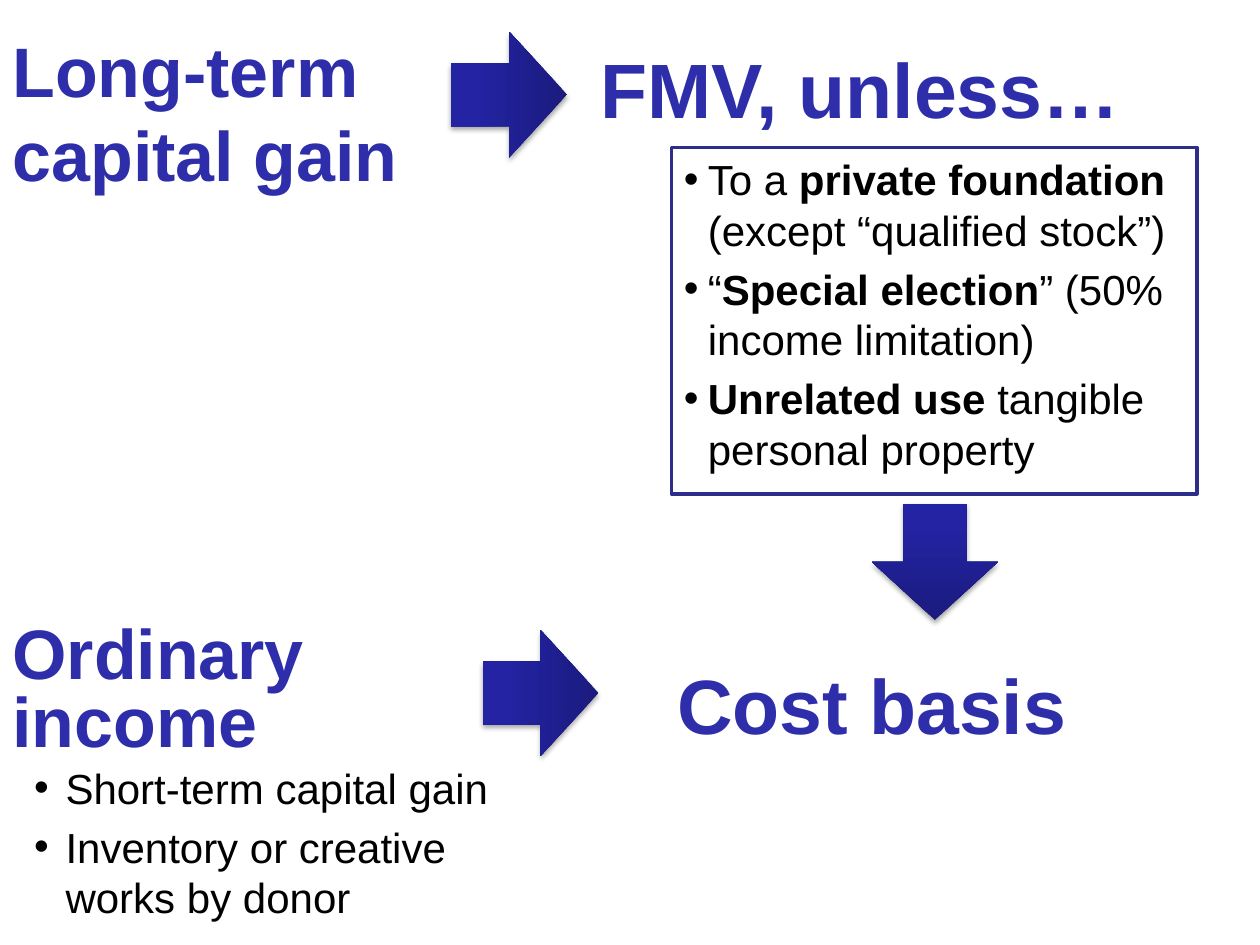
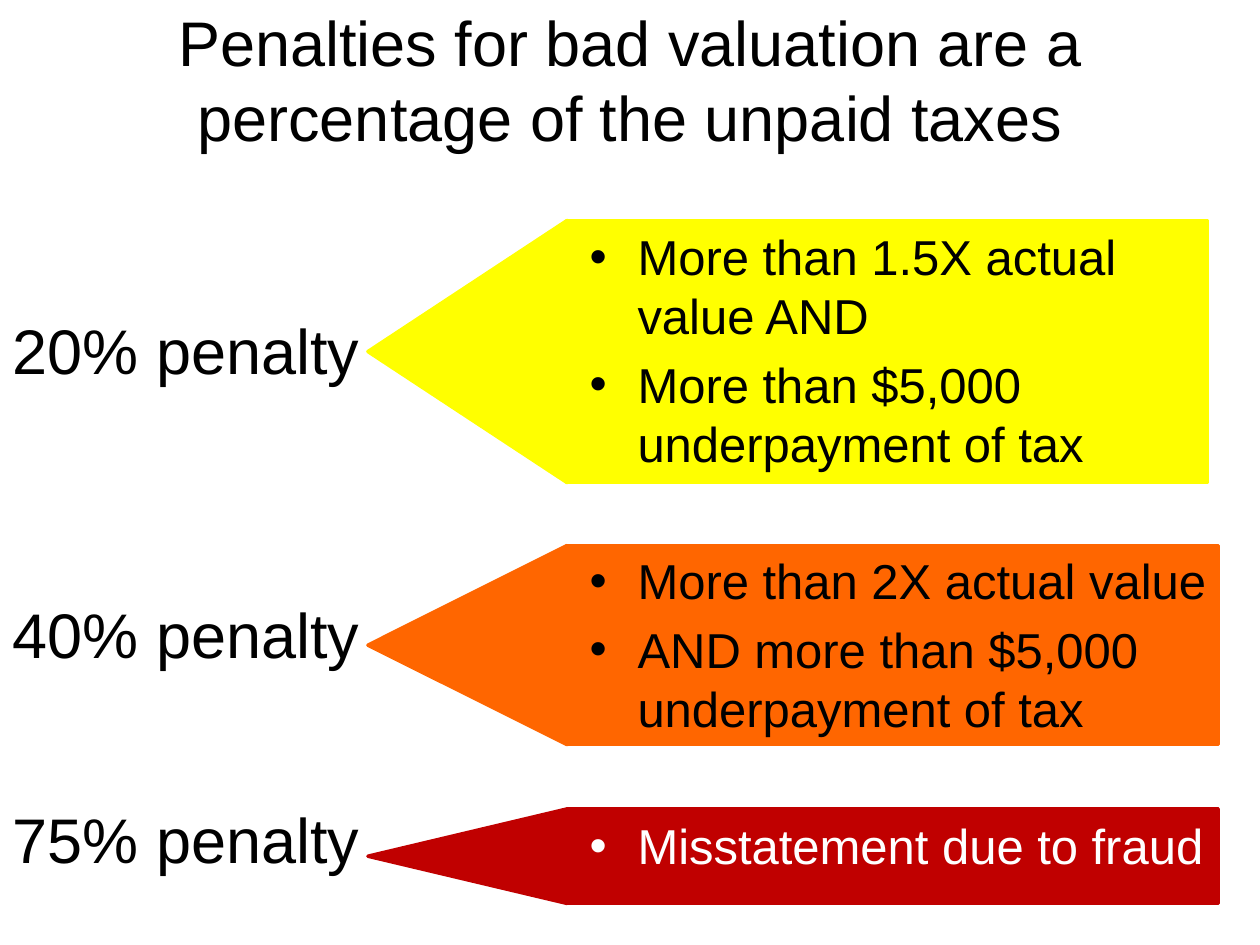
from lxml import etree
from pptx import Presentation
from pptx.dml.color import RGBColor
from pptx.enum.shapes import MSO_SHAPE
from pptx.enum.text import MSO_ANCHOR, MSO_AUTO_SIZE, PP_ALIGN
from pptx.oxml.ns import qn
from pptx.util import Inches, Pt

FONT = "Arial"
BLACK = RGBColor(0x00, 0x00, 0x00)
WHITE = RGBColor(0xFF, 0xFF, 0xFF)
HEADING_BLUE = RGBColor(0x2E, 0x2E, 0xAA)
BORDER_BLUE = RGBColor(0x2D, 0x2D, 0x8A)
ARROW_TIP = RGBColor(0x1B, 0x1B, 0x7E)
ARROW_TAIL = RGBColor(0x23, 0x23, 0xA3)
YELLOW = RGBColor(0xFF, 0xFF, 0x00)
ORANGE = RGBColor(0xFF, 0x66, 0x00)
RED = RGBColor(0xC0, 0x00, 0x00)

TITLE_AND_CONTENT = 1
TWO_CONTENT = 3


def set_bullet(paragraph, indent):
    """Give a hanging bullet, or none when indent is 0."""
    properties = paragraph._p.get_or_add_pPr()
    properties.set("marL", str(Inches(indent)))
    properties.set("indent", str(-Inches(indent)))
    if indent:
        etree.SubElement(properties, qn("a:buFont"), typeface=FONT)
        etree.SubElement(properties, qn("a:buChar"), char="•")
    else:
        etree.SubElement(properties, qn("a:buNone"))


def write_text(frame, *lines, size, color=BLACK, bold=False, align=PP_ALIGN.LEFT,
               anchor=MSO_ANCHOR.TOP, indent=0, line_spacing=None, space_before=None):
    """Write one paragraph per line; *asterisks* switch bold on and off."""
    frame.word_wrap = True
    frame.auto_size = MSO_AUTO_SIZE.NONE
    frame.vertical_anchor = anchor
    for index, line in enumerate(lines):
        paragraph = frame.add_paragraph() if index else frame.paragraphs[0]
        paragraph.alignment = align
        if line_spacing:
            paragraph.line_spacing = line_spacing
        if space_before is not None:
            paragraph.space_before = Pt(space_before)
        set_bullet(paragraph, indent)
        for part, text in enumerate(line.split("*")):
            if text:
                run = paragraph.add_run()
                run.text = text
                run.font.name = FONT
                run.font.size = Pt(size)
                run.font.bold = bold or part % 2 == 1
                run.font.color.rgb = color


class SlideBuilder:
    def __init__(self, presentation):
        self.presentation = presentation
        self.slide = None

    def new_slide(self, layout):
        layouts = self.presentation.slide_layouts
        self.slide = self.presentation.slides.add_slide(layouts[layout])

    def placeholder(self, index, box, *lines, **text_format):
        """Place and fill a placeholder, in front of all that is drawn so far."""
        shape = self.slide.placeholders[index]
        shape.left, shape.top, shape.width, shape.height = map(Inches, box)
        write_text(shape.text_frame, *lines, **text_format)
        self.slide.shapes.element.append(shape.element)
        return shape

    def heading(self, box, text, **text_format):
        shape = self.slide.shapes.add_textbox(*map(Inches, box))
        write_text(shape.text_frame, text, color=HEADING_BLUE, bold=True, **text_format)

    def shape(self, kind, box, fill, line, rotation=0):
        shape = self.slide.shapes.add_shape(kind, *map(Inches, box))
        shape.shadow.inherit = False
        shape.rotation = rotation
        shape.fill.solid()
        shape.fill.fore_color.rgb = fill
        shape.line.color.rgb = line
        shape.line.width = Pt(2)
        return shape

    def arrow(self, left, top, rotation=0):
        shape = self.shape(MSO_SHAPE.DOWN_ARROW, (left, top, 1, 0.92),
                           ARROW_TAIL, ARROW_TAIL, rotation)
        shape.line.fill.background()
        shape.fill.gradient()
        shape.fill.gradient_angle = 90
        stops = zip(shape.fill.gradient_stops, (0, 0.8), (ARROW_TIP, ARROW_TAIL))
        for stop, position, color in stops:
            stop.position = position
            stop.color.rgb = color
        effects = shape.element.spPr.find(qn("a:effectLst"))
        shadow = etree.SubElement(effects, qn("a:outerShdw"), blurRad=str(Pt(3.1)),
                                  dist=str(Pt(1.8)), dir="5400000", rotWithShape="0")
        black = etree.SubElement(shadow, qn("a:srgbClr"), val=str(BLACK))
        etree.SubElement(black, qn("a:alpha"), val="35000")

    def pointed_band(self, top, width, height, color):
        """Draw a bar whose left end is a triangle pointing at its label."""
        bar_left, point = 4.5, 1.58
        self.shape(MSO_SHAPE.RECTANGLE, (bar_left, top, width, height), color, color)
        left = bar_left - (point + height) / 2
        self.shape(MSO_SHAPE.ISOSCELES_TRIANGLE,
                   (left, top + (height - point) / 2, height, point),
                   color, color, rotation=270)


def build_deduction_slide(builder):
    builder.new_slide(TITLE_AND_CONTENT)
    builder.placeholder(0, (0, 0.17, 3.42, 0.83), "Long-term capital gain",
                        size=40, color=HEADING_BLUE, bold=True, space_before=8)
    builder.placeholder(1, (0.17, 6, 4.25, 1.5), "Short-term capital gain",
                        "Inventory or creative works by donor", size=24, indent=0.25)
    builder.heading((0, 4.92, 3.08, 0.75), "Ordinary income",
                    size=40, line_spacing=0.8, space_before=8)
    builder.heading((4.92, 5.17, 4, 0.84), "Cost basis", size=44, align=PP_ALIGN.CENTER)
    builder.heading((4.67, 0.42, 5.33, 0.69), "FMV, unless…", size=44, line_spacing=0.8)
    exceptions = builder.shape(MSO_SHAPE.RECTANGLE, (5.33, 1.17, 4.17, 2.75),
                               WHITE, BORDER_BLUE)
    write_text(exceptions.text_frame,
               "To a *private foundation *(except “qualified stock”)",
               "“*Special election*” (50% income limitation)",
               "*Unrelated use *tangible personal property",
               size=24, indent=0.19, space_before=5)
    builder.arrow(3.54, 0.29, rotation=270)
    builder.arrow(3.79, 5.04, rotation=270)
    builder.arrow(6.92, 4)


def build_penalty_slide(builder):
    builder.new_slide(TWO_CONTENT)
    builder.pointed_band(1.75, 5.08, 2.08, YELLOW)
    builder.pointed_band(4.33, 5.17, 1.58, ORANGE)
    builder.pointed_band(6.42, 5.17, 0.75, RED)
    builder.placeholder(0, (0.5, 0, 9, 1.25),
                        "Penalties for bad valuation are a percentage of the unpaid taxes",
                        size=36, align=PP_ALIGN.CENTER, anchor=MSO_ANCHOR.MIDDLE)
    labels = builder.placeholder(1, (0, 2.42, 3, 4.92), "20% penalty", "40% penalty",
                                 "75% penalty", size=36).text_frame.paragraphs
    labels[1].space_before = Pt(119)
    labels[2].space_before = Pt(74)
    criteria = builder.placeholder(2, (4.58, 1.75, 5.25, 4.95),
                                   "More than 1.5X actual value AND",
                                   "More than $5,000 underpayment of tax",
                                   "More than 2X actual value",
                                   "AND more than $5,000 underpayment of tax",
                                   "Misstatement due to fraud",
                                   size=28, indent=0.38).text_frame.paragraphs
    for band_start in (criteria[2], criteria[4]):
        band_start.space_before = Pt(45)
    criteria[4].runs[0].font.color.rgb = WHITE


def main():
    presentation = Presentation()
    presentation.slide_width = Inches(10)
    presentation.slide_height = Inches(7.5)
    builder = SlideBuilder(presentation)
    build_deduction_slide(builder)
    build_penalty_slide(builder)
    presentation.save("out.pptx")


if __name__ == "__main__":
    main()
